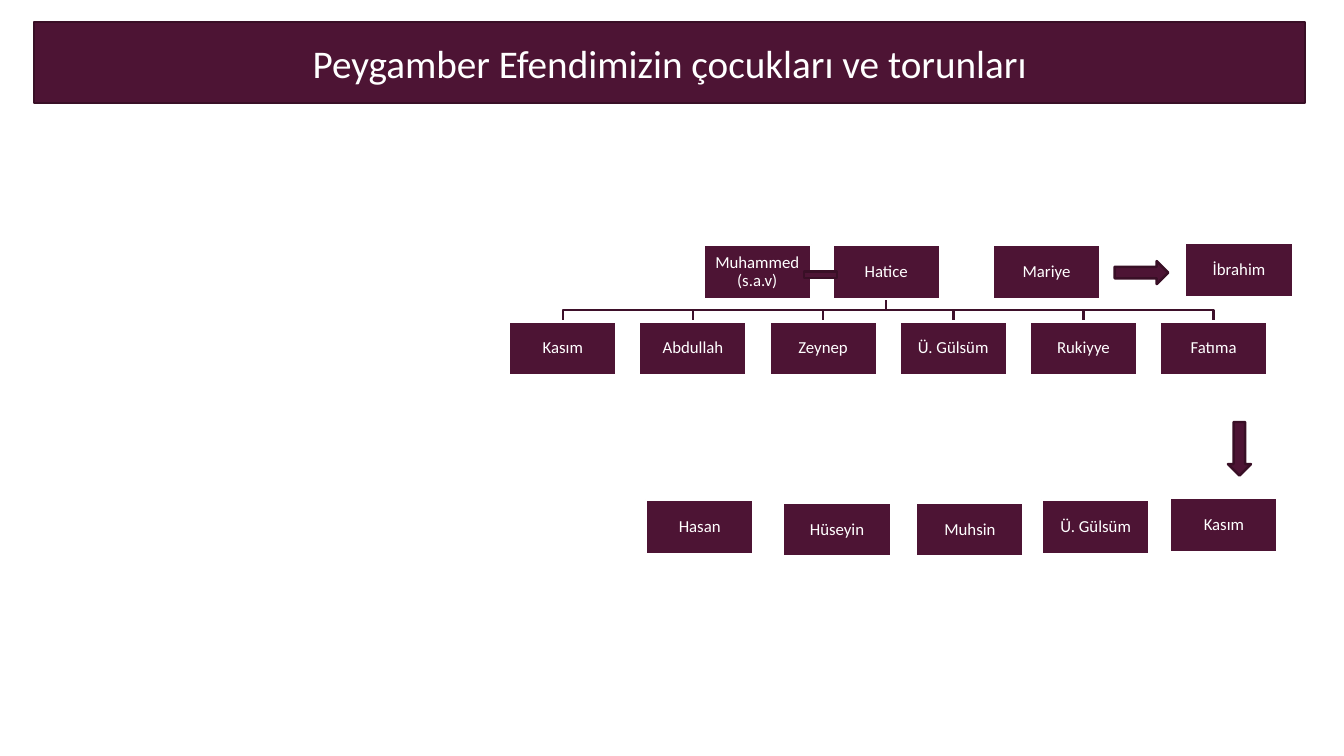
from pptx import Presentation
from pptx.dml.color import RGBColor
from pptx.enum.shapes import MSO_SHAPE as Kind
from pptx.enum.text import MSO_ANCHOR as Anchor, MSO_AUTO_SIZE as Fit, PP_ALIGN as Align
from pptx.oxml import parse_xml
from pptx.oxml.ns import nsdecls
from pptx.util import Cm, Pt


def paint(code):
    return RGBColor.from_string(code)


class Tree:
    plum, edge, link, white = "4D1434", "390F26", "3E102A", "FFFFFF"
    face = "Calibri"
    wide, high = 2.71, 1.36

    def __init__(self, slide):
        self.slide = slide

    def style(self, shape, line):
        shape.fill.solid()
        shape.fill.fore_color.rgb = paint(self.plum)
        shape.line.color.rgb = paint(line)
        shape.line.width = Pt(1.75)

    def label(self, shape, text, size, inset, space):
        frame = shape.text_frame
        frame.text = text
        look = {"word_wrap": True, "auto_size": Fit.NONE,
                "vertical_anchor": Anchor.MIDDLE}
        for side in ("left", "top", "right", "bottom"):
            look["margin_" + side] = Cm(inset)
        for name, value in look.items():
            setattr(frame, name, value)
        para = frame.paragraphs[0]
        para.alignment = Align.CENTER
        para.line_spacing = space
        for name, value in {"name": self.face, "size": Pt(size), "bold": False}.items():
            setattr(para.font, name, value)
        para.font.color.rgb = paint(self.white)

    def title(self, text, left, top, width, height):
        shape = self.slide.shapes.title
        place = {"left": left, "top": top, "width": width, "height": height}
        for name, value in place.items():
            setattr(shape, name, Cm(value))
        shape.element.spPr.append(parse_xml(
            f'<a:prstGeom {nsdecls("a")} prst="roundRect"><a:avLst/></a:prstGeom>'))
        self.style(shape, self.edge)
        self.label(shape, text, 28, 0.25, 1.0)

    def shape(self, kind, left, top, width, height, line):
        shape = self.slide.shapes.add_shape(
            kind, Cm(left), Cm(top), Cm(width), Cm(height))
        self.style(shape, line)
        shape.shadow.inherit = False
        return shape

    def box(self, text, left, top):
        shape = self.shape(Kind.RECTANGLE, left, top, self.wide, self.high, self.white)
        self.label(shape, text, 12, 0.03, 0.9)

    def mark(self, kind, left, top, width, height, turn=0):
        shape = self.shape(kind, left, top, width, height, self.edge)
        shape.rotation = turn

    def branch(self, start, end):
        (left, top), (right, low) = start, end
        mid = (top + low) / 2
        line = self.slide.shapes.build_freeform(Cm(left), Cm(top))
        line.add_line_segments(
            [(Cm(x), Cm(y)) for x, y in ((left, mid), (right, mid), (right, low))],
            close=False)
        shape = line.convert_to_shape()
        shape.fill.background()
        shape.line.color.rgb = paint(self.link)
        shape.line.width = Pt(1.75)
        shape.shadow.inherit = False


def main():
    deck = Presentation()
    deck.slide_width, deck.slide_height = Cm(33.87), Cm(19.05)
    tree = Tree(deck.slides.add_slide(deck.slide_layouts[5]))
    tree.title("Peygamber Efendimizin çocukları ve torunları", 0.86, 0.56, 32.03, 2.03)

    kids = ["Kasım", "Abdullah", "Zeynep", "Ü. Gülsüm", "Rukiyye", "Fatıma"]
    first, pitch, row = 12.83, 3.28, 8.1
    spots = [(name, first + pitch * i, row) for i, name in enumerate(kids)]
    mother = (20.98, 6.17)
    half = tree.wide / 2
    for name, left, top in spots:
        tree.branch((mother[0] + half, mother[1] + tree.high), (left + half, top))

    elders = [("Muhammed (s.a.v)", 17.73, 6.17), ("Hatice", *mother),
              ("Mariye", 25.02, 6.17), ("İbrahim", 29.87, 6.12)]
    heirs = [("Hasan", 16.28, 12.6), ("Hüseyin", 19.74, 12.67),
             ("Muhsin", 23.09, 12.67), ("Ü. Gülsüm", 26.26, 12.6),
             ("Kasım", 29.49, 12.55)]
    for name, left, top in elders + spots + heirs:
        tree.box(name, left, top)

    tree.mark(Kind.RIGHT_ARROW, 28.09, 6.58, 1.35, 0.58)
    tree.mark(Kind.MATH_MINUS, 20.12, 6.58, 1.12, 0.69)
    tree.mark(Kind.RIGHT_ARROW, 30.56, 11.02, 1.35, 0.58, 90)
    deck.save("out.pptx")


if __name__ == "__main__":
    main()
